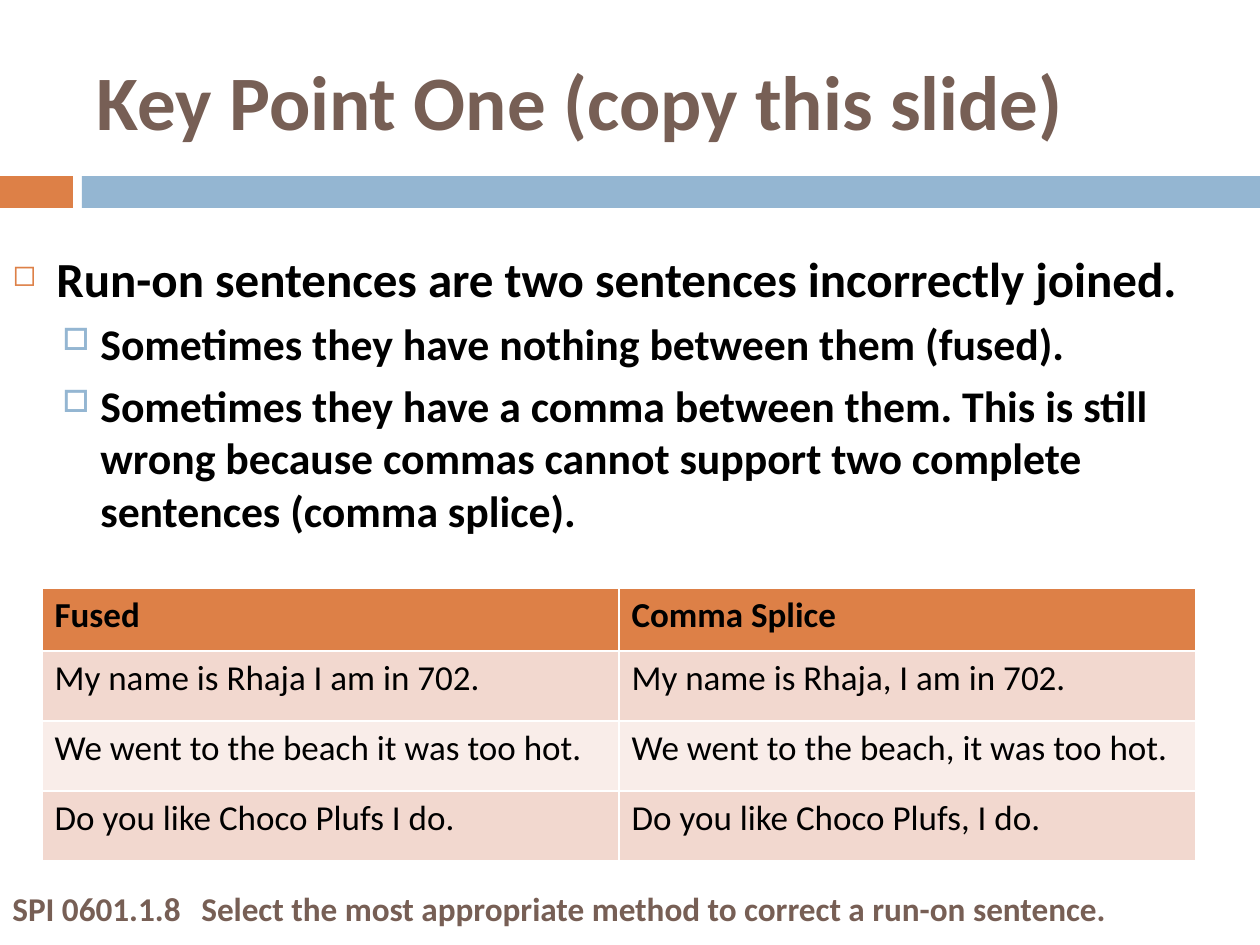
"""Build the run-on sentences slide with its table of fused and comma-spliced examples."""
from lxml.etree import SubElement
from pptx import Presentation
from pptx.dml.color import RGBColor
from pptx.enum.shapes import MSO_SHAPE as Shape
from pptx.enum.text import MSO_ANCHOR as Anchor, PP_ALIGN as Align
from pptx.oxml.ns import qn
from pptx.util import Emu, Pt

TITLE = "Key Point One (copy this slide)"
STANDARD = "SPI 0601.1.8\tSelect the most appropriate method to correct a run-on sentence."
POINTS = [
    (0, "Run-on sentences are two sentences incorrectly joined."),
    (1, "Sometimes they have nothing between them (fused)."),
    (1, "Sometimes they have a comma between them. This is still wrong because "
        "commas cannot support two complete sentences (comma splice)."),
]
LEVELS = [
    dict(size=28, before=7, left=44, hanging=44, bullet="◻", color="DD8047", percent=60),
    dict(size=25, before=5.5, left=88, hanging=38, bullet="□", color="94B6D2", percent=70),
]
EXAMPLES = [
    ("Fused", "Comma Splice"),
    ("My name is Rhaja I am in 702.", "My name is Rhaja, I am in 702."),
    ("We went to the beach it was too hot.", "We went to the beach, it was too hot."),
    ("Do you like Choco Plufs I do.", "Do you like Choco Plufs, I do."),
]
BARS = [((0, 176, 73, 32), "DD8047"), ((82, 176, 1178, 32), "94B6D2")]
HEADER_FILL, ROW_FILLS = "DD8047", ("F2D8CF", "F9EDE9")
HEADER_HEIGHT, ROW_HEIGHT, COLUMN_WIDTH = 63, 70, 577
BROWN, BLACK = "775F55", "000000"


def px(length):
    return Emu(round(length * 914400 / 126))


def box(*lengths):
    return [px(length) for length in lengths]


def color(value):
    return RGBColor.from_string(value)


def write(paragraph, text, size, ink=BLACK, bold=True):
    paragraph.alignment = Align.LEFT
    run = paragraph.add_run()
    run.text = text
    run.font.name, run.font.size, run.font.bold = "Calibri", Pt(size), bold
    run.font.color.rgb = color(ink)


def add_bullet(paragraph, level):
    paragraph.space_before = Pt(level["before"])
    properties = paragraph._p.get_or_add_pPr()
    properties.set("marL", str(px(level["left"])))
    properties.set("indent", str(-px(level["hanging"])))
    bullet_color = SubElement(properties, qn("a:buClr"))
    SubElement(bullet_color, qn("a:srgbClr"), val=level["color"])
    SubElement(properties, qn("a:buSzPct"), val=str(level["percent"] * 1000))
    SubElement(properties, qn("a:buChar"), char=level["bullet"])


def add_text_frame(slide, *position):
    frame = slide.shapes.add_textbox(*box(*position)).text_frame
    frame.word_wrap = True
    return frame


def add_bars(slide):
    for position, fill in BARS:
        bar = slide.shapes.add_shape(Shape.RECTANGLE, *box(*position))
        bar.shadow.inherit = False
        bar.fill.solid()
        bar.fill.fore_color.rgb = color(fill)
        bar.line.fill.background()


def add_title(slide):
    title = slide.shapes.title
    title.left, title.top, title.width, title.height = box(84, 32, 1124, 136)
    title.text_frame.vertical_anchor = Anchor.MIDDLE
    write(title.text_frame.paragraphs[0], TITLE, 44, ink=BROWN)


def add_points(slide):
    frame = add_text_frame(slide, 0, 242, 1260, 620)
    for index, (depth, text) in enumerate(POINTS):
        paragraph = frame.add_paragraph() if index else frame.paragraphs[0]
        paragraph.level = depth
        write(paragraph, text, LEVELS[depth]["size"])
        add_bullet(paragraph, LEVELS[depth])


def add_examples(slide):
    heights = [HEADER_HEIGHT] + [ROW_HEIGHT] * (len(EXAMPLES) - 1)
    columns = len(EXAMPLES[0])
    position = box(42, 588, columns * COLUMN_WIDTH, sum(heights))
    table = slide.shapes.add_table(len(EXAMPLES), columns, *position).table
    for column in table.columns:
        column.width = px(COLUMN_WIDTH)
    for index, texts in enumerate(EXAMPLES):
        table.rows[index].height = px(heights[index])
        fill = ROW_FILLS[(index - 1) % 2] if index else HEADER_FILL
        for cell, text in zip(table.rows[index].cells, texts):
            cell.fill.solid()
            cell.fill.fore_color.rgb = color(fill)
            write(cell.text_frame.paragraphs[0], text, 20, bold=index == 0)


def main():
    presentation = Presentation()
    presentation.slide_width, presentation.slide_height = box(1260, 945)
    slide = presentation.slides.add_slide(presentation.slide_layouts[5])
    add_bars(slide)
    add_title(slide)
    add_points(slide)
    write(add_text_frame(slide, 0, 882, 1260, 53).paragraphs[0], STANDARD, 19, ink=BROWN)
    add_examples(slide)
    presentation.save("out.pptx")


if __name__ == "__main__":
    main()
